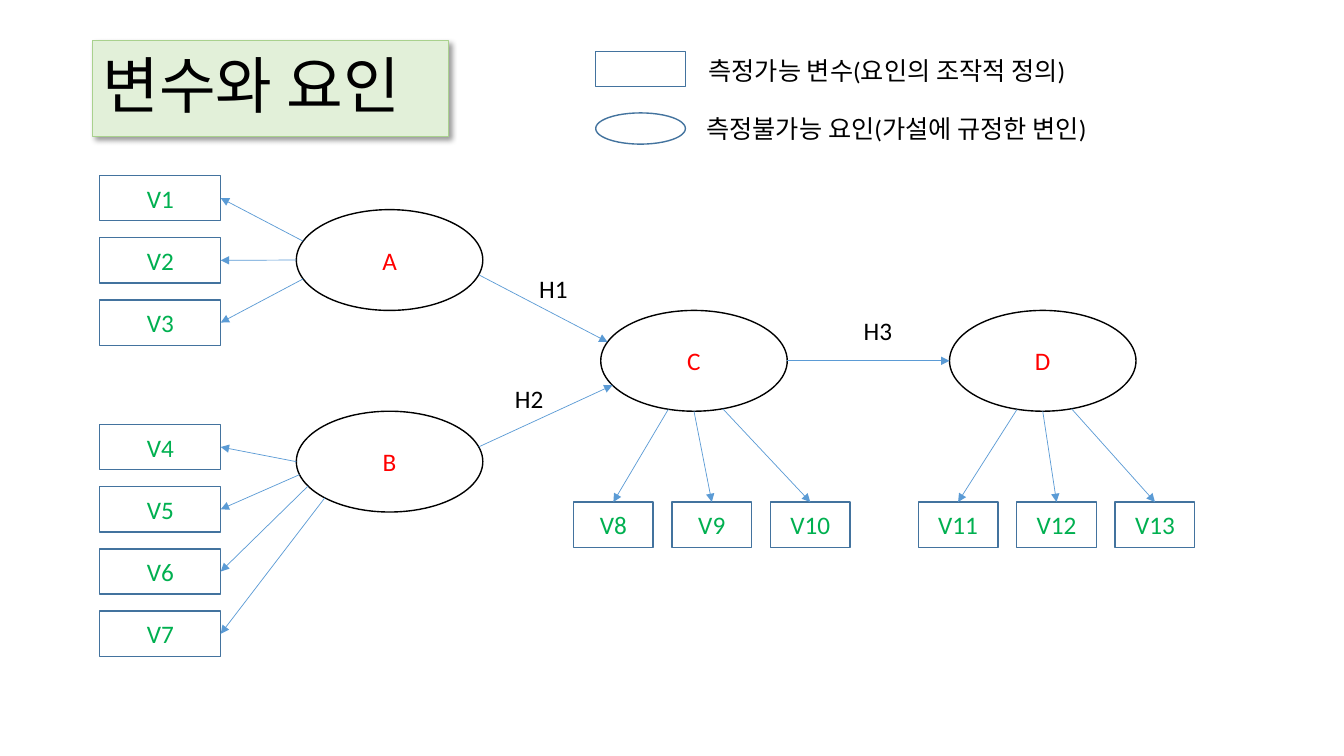
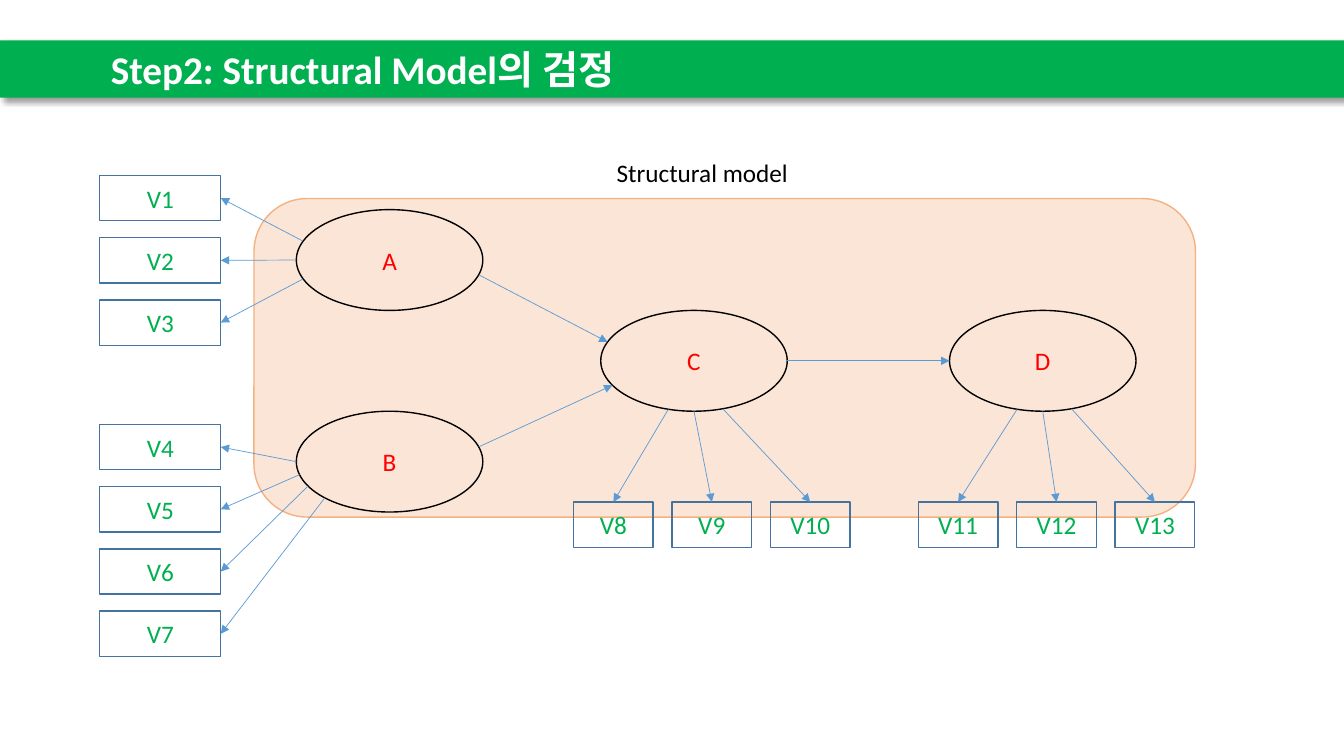
from math import cos, radians, sin

from lxml import etree
from pptx import Presentation
from pptx.dml.color import RGBColor
from pptx.enum.shapes import MSO_CONNECTOR, MSO_SHAPE
from pptx.enum.text import MSO_ANCHOR, MSO_AUTO_SIZE, PP_ALIGN
from pptx.oxml.ns import qn
from pptx.util import Inches, Pt

COLORS = {
    "text": "000000", "factor": "FF0000", "variable": "00B050",
    "box_line": "43739E", "arrow": "5B9BD5", "band": "00B050",
    "band_text": "FFFFFF", "title_fill": "E2F0D9", "title_line": "A9D18E",
    "frame_fill": "FBE5D6", "frame_line": "F4B183", "shadow": "000000",
}
FONT = "Calibri"
COLS, ROWS = 40, 30

# Factors: left column and top row of each ellipse
FACTOR_W, FACTOR_H = 5.55, 4
FACTORS = {"A": (8.82, 8.32), "B": (8.82, 16.32),
           "C": (17.88, 12.32), "D": (28.26, 12.32)}

# Variables on the left: factor, number, slot, angle where the arrow leaves
LEFT_X, LEFT_Y, LEFT_W, LEFT_PITCH = 2.97, 6.96, 3.6, 2.47
LEFT_VARS = [("A", 1, 0, 202), ("A", 2, 1, 180), ("A", 3, 2, 158),
             ("B", 4, 4, 180), ("B", 5, 5, 165), ("B", 6, 6, 151),
             ("B", 7, 7, 134)]

# Variables below: factor, first number, first column
BELOW_Y, BELOW_W, BELOW_PITCH = 19.92, 2.37, 2.93
BELOW_GROUPS = [("C", 8, 17.07), ("D", 11, 27.33)]
BELOW_ANGLES = (106, 90, 72)
BOX_H = 1.8

# Hypotheses: from, angle, to, angle, column and row of the label
HYPOTHESES = {"H1": ("A", 17, "C", 202, 15.75, 10.64),
              "H2": ("B", -17, "C", 151, 15.03, 15),
              "H3": ("A", 0, "C", 180, 25.41, 12.32)}
HYPOTHESES["H3"] = ("C", 0, "D", 180, 25.41, 12.32)


def rgb(name):
    return RGBColor.from_string(COLORS[name])


def write_text(tf, text, size=18, color="text", bold=False,
               align=PP_ALIGN.LEFT, anchor=MSO_ANCHOR.MIDDLE, spacing=None):
    tf.vertical_anchor = anchor
    p = tf.paragraphs[0]
    p.alignment = align
    if spacing:
        p.line_spacing = spacing
    r = p.add_run()
    r.text = text
    r.font.name = FONT
    r.font.size = Pt(size)
    r.font.bold = bold
    r.font.color.rgb = rgb(color)


def rim_point(factor, angle):
    """Point on the rim of a factor, angle clockwise from the right."""
    x, y = FACTORS[factor]
    a = radians(angle)
    return (x + FACTOR_W / 2 * (1 + cos(a)), y + FACTOR_H / 2 * (1 + sin(a)))


class Deck:
    """Shared style and the slide being drawn; lengths in columns and rows."""

    def __init__(self):
        self.prs = Presentation()
        self.prs.slide_width = Inches(13.33)
        self.prs.slide_height = Inches(7.5)
        self.s = None

    def new_slide(self):
        self.s = self.prs.slides.add_slide(self.prs.slide_layouts[6])

    def x(self, cols):
        return round(self.prs.slide_width * cols / COLS)

    def y(self, rows):
        return round(self.prs.slide_height * rows / ROWS)

    def shape(self, kind, x, y, w, h, fill=None, line=None, width=1):
        sp = self.s.shapes.add_shape(kind, self.x(x), self.y(y),
                                     self.x(w), self.y(h))
        sp.shadow.inherit = False
        if fill:
            sp.fill.solid()
            sp.fill.fore_color.rgb = rgb(fill)
        else:
            sp.fill.background()
        if line:
            sp.line.color.rgb = rgb(line)
            sp.line.width = Pt(width)
        else:
            sp.line.fill.background()
        return sp

    def drop_shadow(self, sp):
        effects = sp._element.spPr.find(qn("a:effectLst"))
        shadow = etree.SubElement(
            effects, qn("a:outerShdw"), blurRad=str(Pt(4)), dist=str(Pt(3)),
            dir="2700000", algn="tl", rotWithShape="0")
        color = etree.SubElement(shadow, qn("a:srgbClr"), val=COLORS["shadow"])
        etree.SubElement(color, qn("a:alpha"), val="40000")

    def title(self, text):
        sp = self.shape(MSO_SHAPE.RECTANGLE, 2.76, 1.6, 10.59, 3.8,
                        "title_fill", "title_line", 0.75)
        self.drop_shadow(sp)
        write_text(sp.text_frame, text, size=44, spacing=0.9)

    def band(self, text):
        sp = self.shape(MSO_SHAPE.RECTANGLE, 0, 1.6, COLS, 2.28, "band")
        self.drop_shadow(sp)
        sp.text_frame.margin_left = self.x(3.3)
        write_text(sp.text_frame, text, size=28, color="band_text", bold=True)

    def label(self, text, x, y, w):
        sp = self.s.shapes.add_textbox(self.x(x), self.y(y),
                                       self.x(w), self.y(1.6))
        sp.text_frame.word_wrap = False
        sp.text_frame.auto_size = MSO_AUTO_SIZE.SHAPE_TO_FIT_TEXT
        write_text(sp.text_frame, text, anchor=MSO_ANCHOR.TOP)

    def factor(self, name):
        sp = self.shape(MSO_SHAPE.OVAL, *FACTORS[name], FACTOR_W, FACTOR_H,
                        line="text")
        write_text(sp.text_frame, name, color="factor", align=PP_ALIGN.CENTER)

    def variable(self, number, x, y, w):
        sp = self.shape(MSO_SHAPE.RECTANGLE, x, y, w, BOX_H, line="box_line")
        write_text(sp.text_frame, f"V{number}", color="variable",
                   align=PP_ALIGN.CENTER)

    def arrow(self, start, end):
        c = self.s.shapes.add_connector(
            MSO_CONNECTOR.STRAIGHT, self.x(start[0]), self.y(start[1]),
            self.x(end[0]), self.y(end[1]))
        c.line.color.rgb = rgb("arrow")
        c.line.width = Pt(0.5)
        etree.SubElement(c.line._get_or_add_ln(), qn("a:tailEnd"),
                         type="triangle")
        etree.SubElement(c._element.spPr, qn("a:effectLst"))

    def model(self):
        """Factors, their variables and the arrows between them."""
        for name in FACTORS:
            self.factor(name)
        for name, number, slot, angle in LEFT_VARS:
            y = LEFT_Y + slot * LEFT_PITCH
            self.variable(number, LEFT_X, y, LEFT_W)
            self.arrow(rim_point(name, angle), (LEFT_X + LEFT_W, y + BOX_H / 2))
        for name, first, left in BELOW_GROUPS:
            for i, angle in enumerate(BELOW_ANGLES):
                x = left + i * BELOW_PITCH
                self.variable(first + i, x, BELOW_Y, BELOW_W)
                self.arrow(rim_point(name, angle), (x + BELOW_W / 2, BELOW_Y))
        for source, leave, target, arrive, *_ in HYPOTHESES.values():
            self.arrow(rim_point(source, leave), rim_point(target, arrive))


def variables_slide(deck):
    deck.new_slide()
    deck.title("변수와 요인")
    deck.model()
    for name, (*_, x, y) in HYPOTHESES.items():
        deck.label(name, x, y, 1.47)
    # Legend
    deck.shape(MSO_SHAPE.RECTANGLE, 17.73, 2.04, 2.67, 1.4, line="box_line")
    deck.label("측정가능 변수(요인의 조작적 정의)", 20.79, 2, 12.18)
    deck.shape(MSO_SHAPE.OVAL, 17.73, 4.48, 2.67, 1.24, line="box_line")
    deck.label("측정불가능 요인(가설에 규정한 변인)", 20.73, 4.32, 12.96)


def structural_slide(deck):
    deck.new_slide()
    # Frame behind the structural part
    deck.shape(MSO_SHAPE.ROUNDED_RECTANGLE, 7.56, 7.88, 28.02, 12.64,
               "frame_fill", "frame_line")
    deck.model()
    deck.band("Step2: Structural Model의 검정")
    deck.label("Structural model", 18.06, 6.04, 5.76)


def main():
    deck = Deck()
    variables_slide(deck)
    structural_slide(deck)
    deck.prs.save("out.pptx")


if __name__ == "__main__":
    main()
